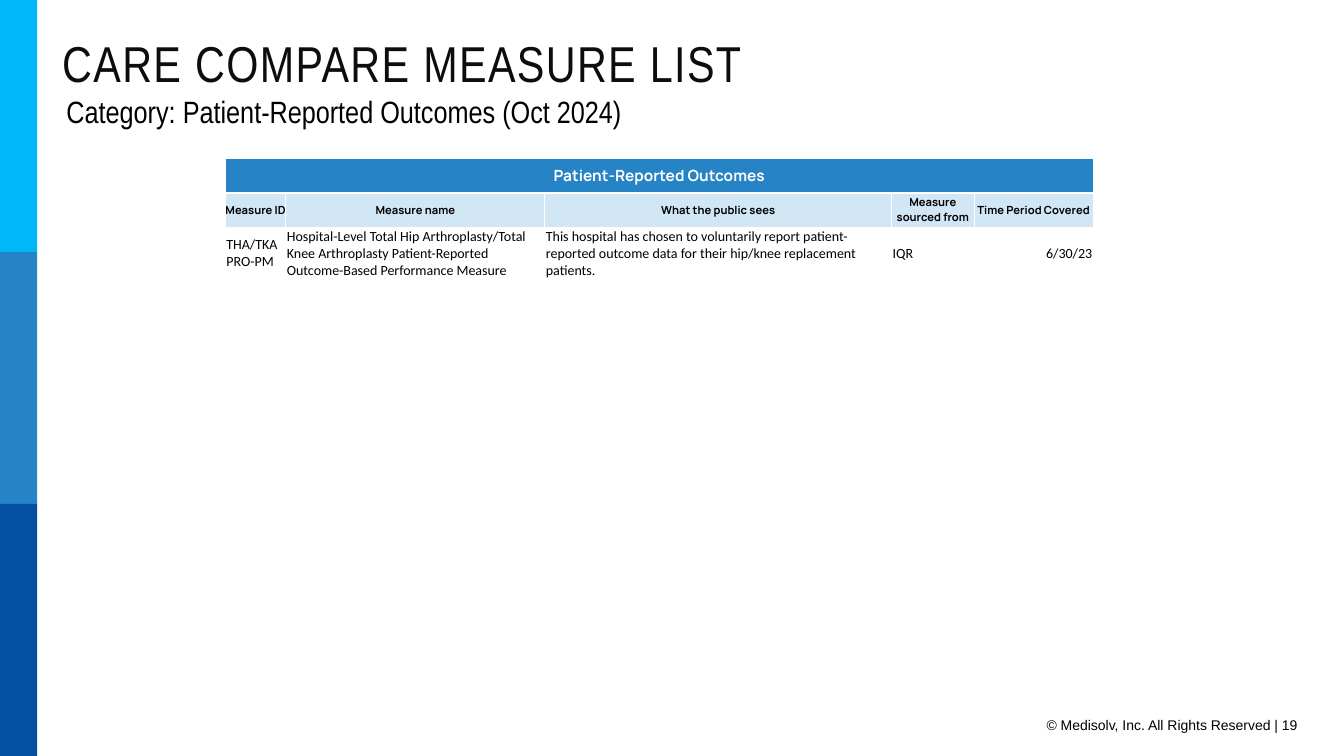
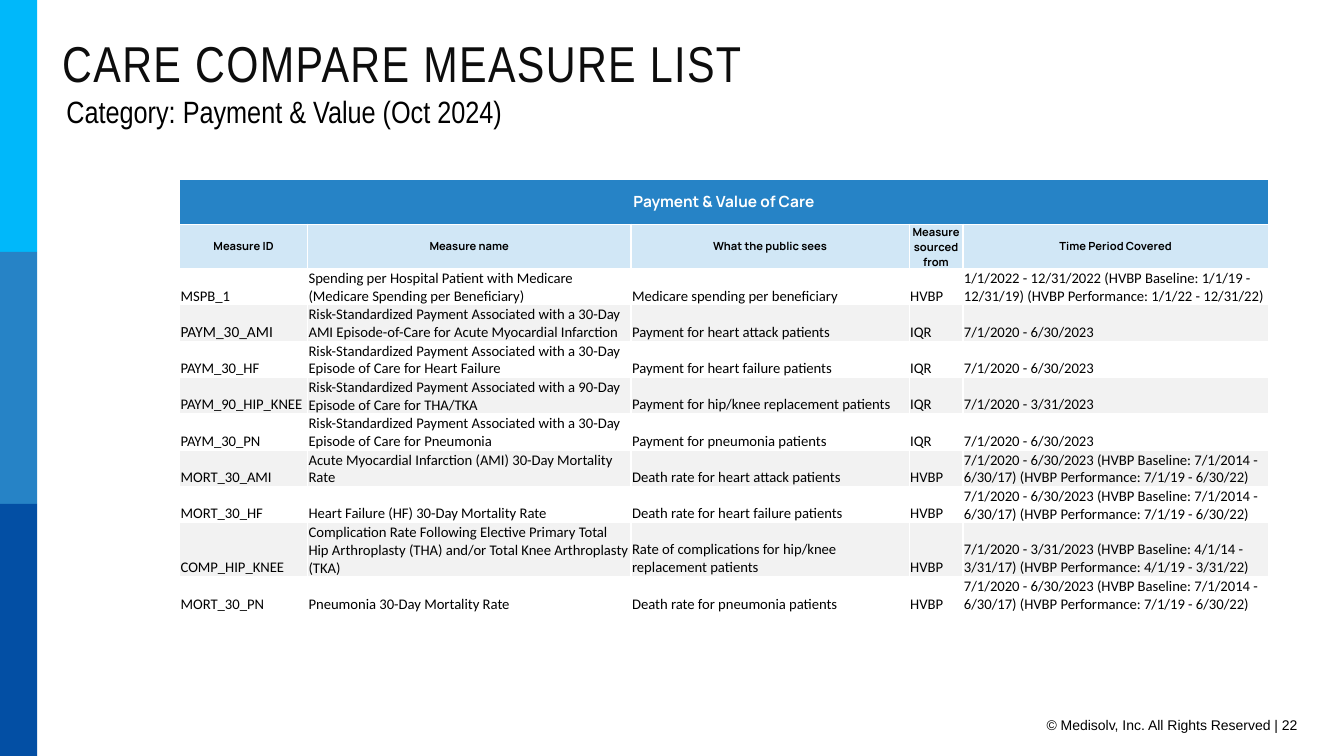
"""Build two slides that list hospital measures by category."""
from lxml.etree import SubElement as Sub
from pptx import Presentation
from pptx.dml.color import RGBColor as Rgb
from pptx.enum.shapes import MSO_SHAPE as Shape
from pptx.enum.text import MSO_ANCHOR as Anchor, PP_ALIGN as Align
from pptx.oxml.ns import qn
from pptx.util import Pt

HUES = {
    "sky": "00B8FA", "blue": "2683C6", "navy": "034FA4", "pale": "D1E7F6",
    "grey": "F2F2F2", "white": "FFFFFF", "black": "000000", "ink": "0D0D0D",
}
FONTS = {
    "title": {"name": "Arial Narrow", "size": Pt(36)},
    "topic": {"name": "Arial Narrow", "size": Pt(22)},
    "foot": {"name": "Arial", "size": Pt(10)},
    "top": {"name": "Manrope", "size": Pt(11), "bold": True},
    "head": {"name": "Manrope", "size": Pt(8), "bold": True},
    "body": {"name": "Calibri", "bold": False},
}
SIDES = ("left", "right", "top", "bottom")
HEADS = ("Measure ID", "Measure name", "What the public sees",
         "Measure sourced from", "Time Period Covered")
RISK = "Risk-Standardized Payment Associated with a "
LONG = ("7/1/2020 - 6/30/2023 (HVBP Baseline: 7/1/2014 - 6/30/17) "
        "(HVBP Performance: 7/1/19 - 6/30/22)")
SHORT = "7/1/2020 - 6/30/2023"
REPORT = [
    ("THA/TKA PRO-PM",
     "Hospital-Level Total Hip Arthroplasty/Total Knee Arthroplasty "
     "Patient-Reported Outcome-Based Performance Measure",
     "This hospital has chosen to voluntarily report patient-reported "
     "outcome data for their hip/knee replacement patients.",
     "IQR", "6/30/23"),
]
VALUE = [
    ("MSPB_1",
     "Spending per Hospital Patient with Medicare "
     "(Medicare Spending per Beneficiary)",
     "Medicare spending per beneficiary", "HVBP",
     "1/1/2022 - 12/31/2022 (HVBP Baseline: 1/1/19 - 12/31/19) "
     "(HVBP Performance: 1/1/22 - 12/31/22)"),
    ("PAYM_30_AMI",
     RISK + "30-Day AMI Episode-of-Care for Acute Myocardial Infarction",
     "Payment for heart attack patients", "IQR", SHORT),
    ("PAYM_30_HF", RISK + "30-Day Episode of Care for Heart Failure",
     "Payment for heart failure patients", "IQR", SHORT),
    ("PAYM_90_HIP_KNEE", RISK + "90-Day Episode of Care for THA/TKA",
     "Payment for hip/knee replacement patients", "IQR",
     "7/1/2020 - 3/31/2023"),
    ("PAYM_30_PN", RISK + "30-Day Episode of Care for Pneumonia",
     "Payment for pneumonia patients", "IQR", SHORT),
    ("MORT_30_AMI", "Acute Myocardial Infarction (AMI) 30-Day Mortality Rate",
     "Death rate for heart attack patients", "HVBP", LONG),
    ("MORT_30_HF", "Heart Failure (HF) 30-Day Mortality Rate",
     "Death rate for heart failure patients", "HVBP", LONG),
    ("COMP_HIP_KNEE",
     "Complication Rate Following Elective Primary Total Hip Arthroplasty "
     "(THA) and/or Total Knee Arthroplasty (TKA)",
     "Rate of complications for hip/knee replacement patients", "HVBP",
     "7/1/2020 - 3/31/2023 (HVBP Baseline: 4/1/14 - 3/31/17) "
     "(HVBP Performance: 4/1/19 - 3/31/22)"),
    ("MORT_30_PN", "Pneumonia 30-Day Mortality Rate",
     "Death rate for pneumonia patients", "HVBP", LONG),
]


def tint(fill, hue):
    fill.solid()
    fill.fore_color.rgb = Rgb.from_string(HUES[hue])


def put(item, attrs):
    for key, val in attrs.items():
        setattr(item, key, val)


def write(frame, text, font, hue="black", **paras):
    para = frame.paragraphs[0]
    put(para, paras)
    run = para.add_run()
    run.text = text
    put(run.font, FONTS[font])
    run.font.color.rgb = Rgb.from_string(HUES[hue])
    return run


def label(slide, at, text, font, hue="black", frame=None, **paras):
    box = slide.shapes.add_textbox(*map(Pt, at)).text_frame
    put(box, {"word_wrap": True, **(frame or {})})
    return write(box, text, font, hue, **paras)


def band(slide, row, hue):
    bar = slide.shapes.add_shape(
        Shape.RECTANGLE, 0, Pt(180 * row), Pt(26.5), Pt(180))
    bar.shadow.inherit = False
    tint(bar.fill, hue)
    bar.line.fill.background()


def edge(cell):
    props = cell._tc.get_or_add_tcPr()
    for tag in ("a:lnL", "a:lnR", "a:lnT", "a:lnB"):
        line = Sub(props, qn(tag), w=str(Pt(1)))
        Sub(Sub(line, qn("a:solidFill")), qn("a:srgbClr"), val=HUES["white"])


def style(cell, fill, gaps, anchor=Anchor.MIDDLE):
    edge(cell)
    tint(cell.fill, fill)
    cell.vertical_anchor = anchor
    put(cell, {f"margin_{side}": Pt(gap) for side, gap in zip(SIDES, gaps)})


def grid(slide, at, cols, tall, low, name, rows, size, anchor, last, odd):
    highs = [tall, tall] + [low] * len(rows)
    table = slide.shapes.add_table(
        len(highs), len(cols), *map(Pt, at), Pt(sum(cols)),
        Pt(sum(highs))).table
    put(table, {"first_row": False, "horz_banding": False})
    for col, wide in zip(table.columns, cols):
        col.width = Pt(wide)
    for row, high in zip(table.rows, highs):
        row.height = Pt(high)
    for num in range(len(cols)):
        style(table.cell(0, num), "blue", (0, 0, 0, 0))
    table.cell(0, 0).merge(table.cell(0, len(cols) - 1))
    write(table.cell(0, 0).text_frame, name, "top", "white",
          alignment=Align.CENTER)
    for num, text in enumerate(HEADS):
        cell = table.cell(1, num)
        style(cell, "pale", (0, 0, 0, 0))
        write(cell.text_frame, text, "head", alignment=Align.CENTER)
    for line, row in enumerate(rows):
        for num, text in enumerate(row):
            cell = table.cell(line + 2, num)
            style(cell, ("white", "grey")[line % 2], (0.75, 0.75, 0.75, 0),
                  anchor)
            side = last if num == len(cols) - 1 else Align.LEFT
            run = write(cell.text_frame, text, "body", alignment=side)
            run.font.size = Pt(odd.get(text, size))


def page(deck, num, topic, **table):
    slide = deck.slides.add_slide(deck.slide_layouts[6])
    for row, hue in enumerate(("sky", "blue", "navy")):
        band(slide, row, hue)
    label(slide, (453.6, 508.3, 480.2, 19.4),
          f"© Medisolv, Inc. All Rights Reserved | {num}", "foot",
          alignment=Align.RIGHT)
    grid(slide, **table)
    run = label(slide, (37.4, 24.5, 765.4, 47.5), "CARE COMPARE MEASURE LIST",
                "title", "ink", {"vertical_anchor": Anchor.MIDDLE},
                line_spacing=0.8)
    run._r.get_or_add_rPr().set("spc", "100")
    gaps = {f"margin_{side}": Pt(3.6) for side in SIDES}
    label(slide, (36.7, 65.5, 443, 33.8), f"Category: {topic} (Oct 2024)",
          "topic", frame={**gaps, "margin_left": Pt(10.8)},
          line_spacing=0.9, space_after=Pt(2))


def main():
    deck = Presentation()
    put(deck, {"slide_width": Pt(960), "slide_height": Pt(540)})
    page(deck, 19, "Patient-Reported Outcomes", at=(161, 113.3),
         cols=(43.2, 185, 247.7, 59, 85), tall=24.5, low=24.5,
         name="Patient-Reported Outcomes", rows=REPORT, size=10,
         anchor=Anchor.MIDDLE, last=Align.RIGHT, odd={})
    page(deck, 22, "Payment & Value", at=(128.3, 128.3),
         cols=(91.4, 231.1, 198.7, 38.4, 218.2), tall=31.8, low=21.6,
         name="Payment & Value of Care", rows=VALUE, size=10.5,
         anchor=Anchor.BOTTOM, last=Align.LEFT, odd={"PAYM_30_AMI": 11})
    deck.save("out.pptx")


if __name__ == "__main__":
    main()
